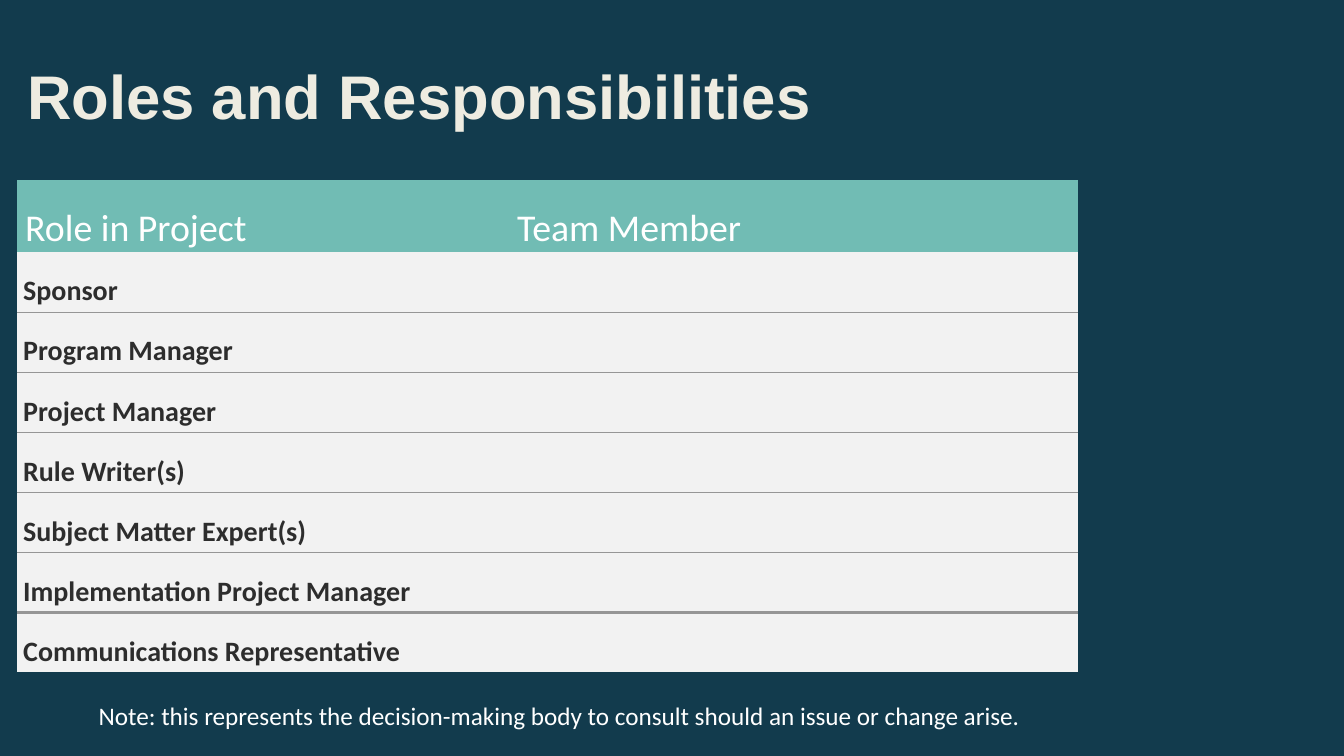
from lxml import etree
from pptx import Presentation
from pptx.dml.color import RGBColor
from pptx.enum.text import MSO_ANCHOR, PP_ALIGN
from pptx.oxml.ns import qn
from pptx.util import Inches, Pt

MIDDLE, TOP = MSO_ANCHOR.MIDDLE, MSO_ANCHOR.TOP
LEFT = PP_ALIGN.LEFT
TITLE_ONLY = 5

# Content
TITLE = "Roles and Responsibilities"
HEADINGS = ["Role in Project", "Team Member"]
ROLES = [
    "Sponsor",
    "Program Manager",
    "Project Manager",
    "Rule Writer(s)",
    "Subject Matter Expert(s)",
    "Implementation Project Manager",
    "Communications Representative",
]
NOTE = ("Note: this represents the decision-making body to consult "
        "should an issue or change arise.")

COLORS = {
    "background": "123B4D", "title": "EEECE1", "header": "71BCB4",
    "body": "F2F2F2", "role": "2D2D2D", "white": "FFFFFF", "rule": "969696",
}

# Layout
COLUMN_WIDTHS = [4.96, 5.56]
HEADER_HEIGHT = 0.71
BODY_HEIGHT = 4.17
HEADING_INDENTS = [0.08, 0]
ROLE_INDENT = 0.06
THIN_RULE, THICK_RULE = 0.75, 2.25


def rgb(name):
    return RGBColor.from_string(COLORS[name])


def add_text(paragraph, text, size, color, font="Calibri", bold=False):
    run = paragraph.add_run()
    run.text = text
    run.font.name = font
    run.font.size = Pt(size)
    run.font.bold = bold
    run.font.color.rgb = rgb(color)


def style_cell(cell, fill, rule_above, rule_below):
    """Draw the row rules, hide the other borders and fill the cell."""
    properties = cell._tc.get_or_add_tcPr()
    edges = {"a:lnL": 0, "a:lnR": 0, "a:lnT": rule_above, "a:lnB": rule_below}
    for tag, width in edges.items():
        line = etree.SubElement(properties, qn(tag))
        if width:
            line.set("w", str(Pt(width)))
            solid = etree.SubElement(line, qn("a:solidFill"))
            etree.SubElement(solid, qn("a:srgbClr"), val=COLORS["rule"])
        else:
            etree.SubElement(line, qn("a:noFill"))
    cell.fill.solid()
    cell.fill.fore_color.rgb = rgb(fill)


def write_cell(cell, text, indent, anchor, **style):
    cell.margin_left = Inches(indent)
    cell.margin_top = Inches(0.17)
    cell.margin_right = cell.margin_bottom = 0
    cell.vertical_anchor = anchor
    paragraph = cell.text_frame.paragraphs[0]
    paragraph.line_spacing = 1.15
    paragraph.space_after = Pt(10)
    add_text(paragraph, text, **style)


deck = Presentation()
deck.slide_width, deck.slide_height = Inches(13.33), Inches(7.5)
slide = deck.slides.add_slide(deck.slide_layouts[TITLE_ONLY])
slide.background.fill.solid()
slide.background.fill.fore_color.rgb = rgb("background")

# Title
title = slide.shapes.title
title.left, title.top = Inches(0.17), Inches(0.33)
title.width, title.height = Inches(13), Inches(1.22)
title.text_frame.vertical_anchor = MIDDLE
heading = title.text_frame.paragraphs[0]
heading.alignment = LEFT
add_text(heading, TITLE, 44, "title", font="Arial", bold=True)

# Roles table
roles_table = slide.shapes.add_table(
    len(ROLES) + 1, len(HEADINGS), Inches(0.17), Inches(1.79),
    Inches(sum(COLUMN_WIDTHS)), Inches(HEADER_HEIGHT + BODY_HEIGHT)).table
roles_table.first_row = roles_table.horz_banding = False
for column, width in zip(roles_table.columns, COLUMN_WIDTHS):
    column.width = Inches(width)
for index, row in enumerate(roles_table.rows):
    row.height = Inches(BODY_HEIGHT / len(ROLES) if index else HEADER_HEIGHT)

# Rule under each row: none below the header and the last role
rules = [0] + [THIN_RULE] * (len(ROLES) - 2) + [THICK_RULE, 0]
for index, row in enumerate(roles_table.rows):
    for cell in row.cells:
        style_cell(cell, "body" if index else "header",
                   rules[index - 1] if index else 0, rules[index])

for column, (text, indent) in enumerate(zip(HEADINGS, HEADING_INDENTS)):
    write_cell(roles_table.cell(0, column), text, indent, MIDDLE,
               size=27, color="white")
for index, role in enumerate(ROLES, start=1):
    write_cell(roles_table.cell(index, 0), role, ROLE_INDENT, TOP,
               size=20, color="role", bold=True)

# Note
note = slide.shapes.add_textbox(
    Inches(0.88), Inches(6.9), Inches(10.39), Inches(0.4)).text_frame
note.word_wrap = True
add_text(note.paragraphs[0], NOTE, 18, "white")

deck.save("out.pptx")
